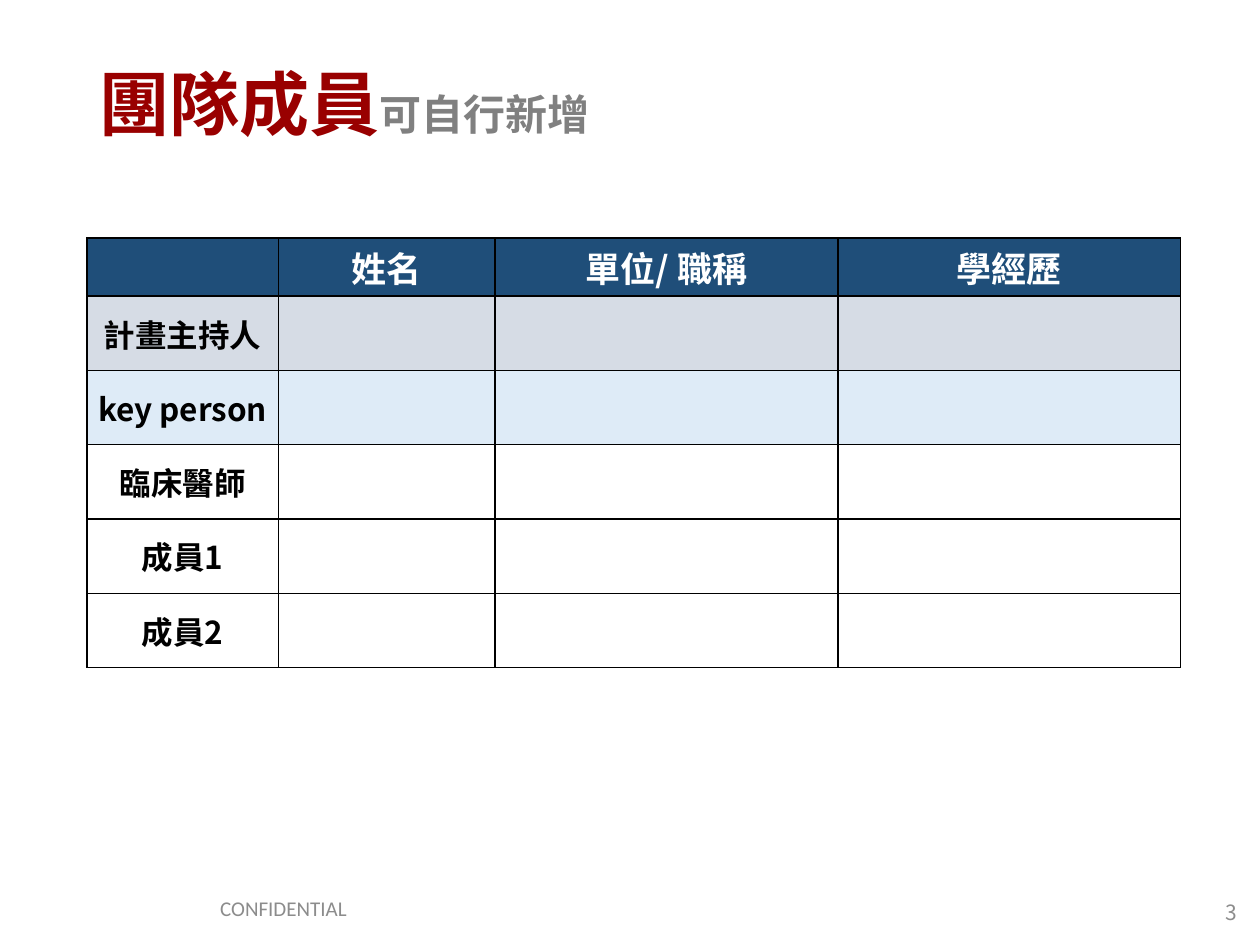
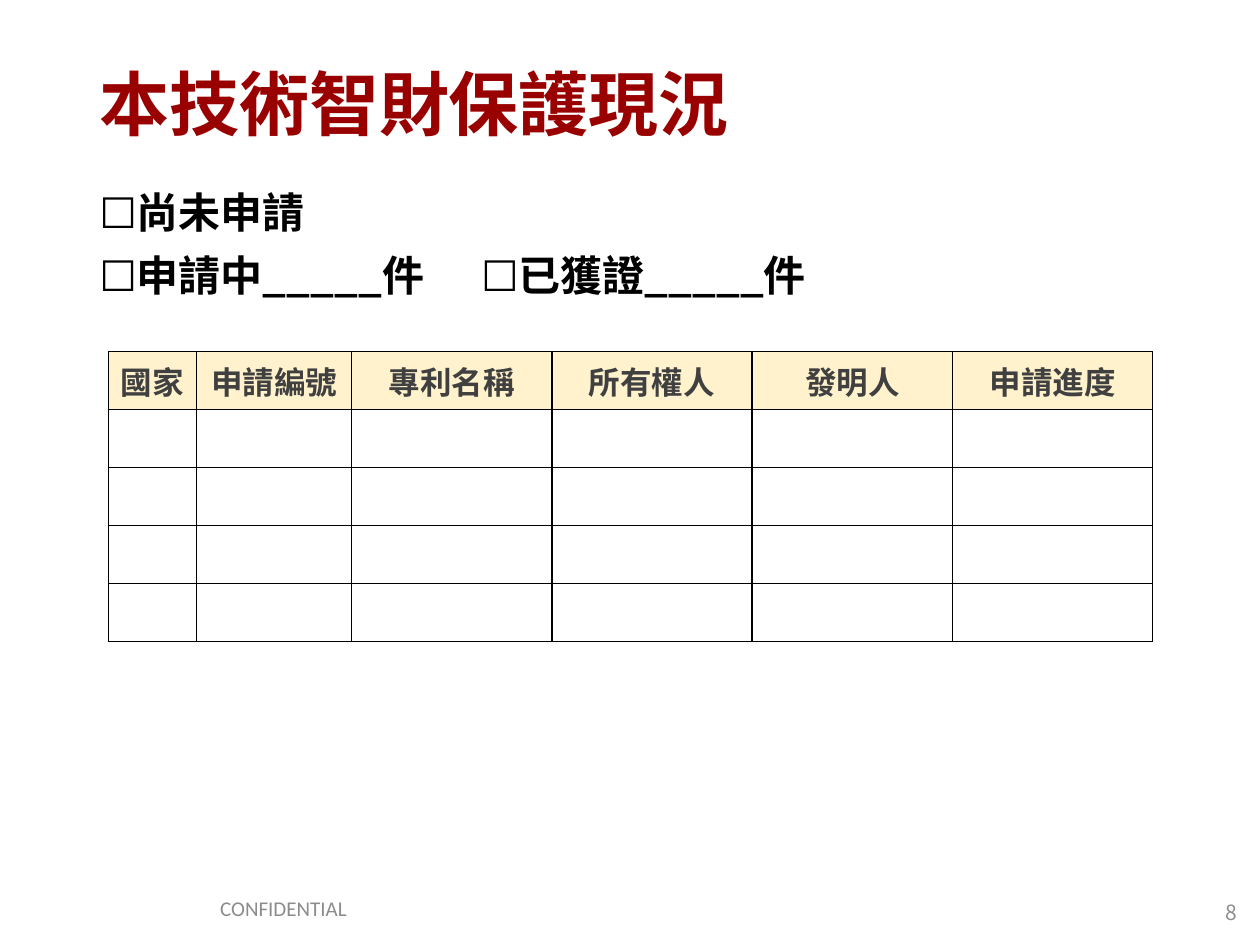
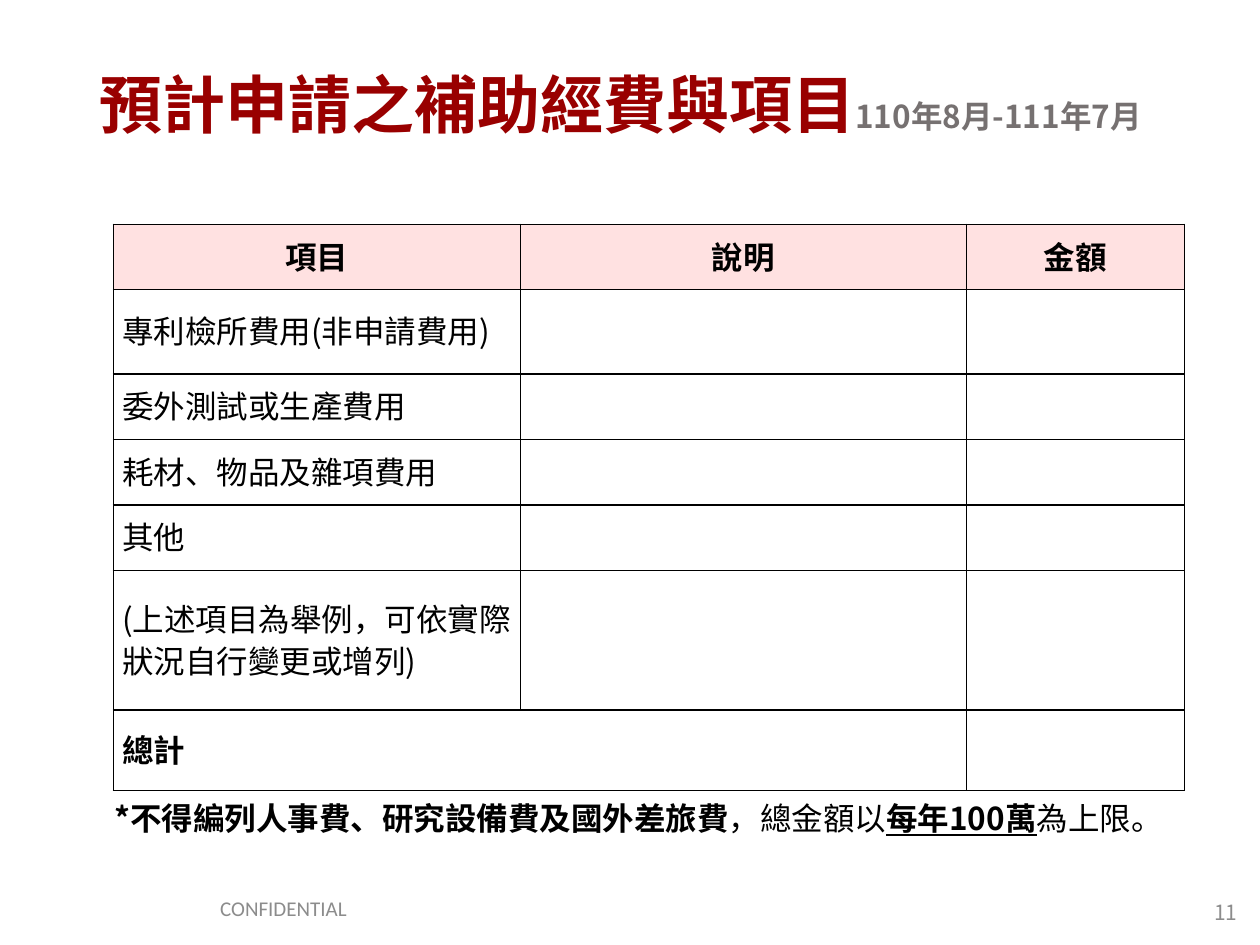
from lxml.etree import SubElement
from pptx import Presentation
from pptx.dml.color import RGBColor
from pptx.enum.text import MSO_ANCHOR, PP_ALIGN
from pptx.oxml.ns import qn
from pptx.util import Inches, Pt

RED = RGBColor(0x99, 0x00, 0x00)
GRAY = RGBColor(0x80, 0x80, 0x80)
WARM_GRAY = RGBColor(0x76, 0x71, 0x71)
FOOTER_GRAY = RGBColor(0x8C, 0x8C, 0x8C)
DARK_GRAY = RGBColor(0x40, 0x40, 0x40)
BLACK = RGBColor(0x00, 0x00, 0x00)
WHITE = RGBColor(0xFF, 0xFF, 0xFF)
NAVY = RGBColor(0x1F, 0x4E, 0x79)
BLUE_GRAY = RGBColor(0xD6, 0xDC, 0xE5)
LIGHT_BLUE = RGBColor(0xDE, 0xEB, 0xF7)
CREAM = RGBColor(0xFF, 0xF2, 0xCC)
PINK = RGBColor(0xFF, 0xE1, 0xE1)

CJK_FONT = "Noto Sans CJK SC"
TIGHT = 0.83  # line spacing of running text
CELL_MARGINS = (0.07, 0)


class Deck:
    """Holds the shared style and the current slide."""

    def __init__(self):
        self.deck = Presentation()
        self.deck.slide_width = Inches(10)
        self.deck.slide_height = Inches(7.5)
        self.page = None

    def add_page(self, number, title, size=40, note="", note_size=24, note_color=GRAY):
        self.page = self.deck.slides.add_slide(self.deck.slide_layouts[6])
        spans = [(title, dict(size=Pt(size), bold=True, color=RED))]
        if note:
            spans.append((note, dict(size=Pt(note_size), bold=True, color=note_color)))
        self.text((0.69, 0.4, 8.62, 0.94), [spans], anchor=MSO_ANCHOR.MIDDLE,
                  line_spacing=TIGHT)
        # Footer
        small = dict(size=Pt(12), color=FOOTER_GRAY)
        self.text((9.46, 7.04, 0.46, 0.4), [[(str(number), small)]],
                  anchor=MSO_ANCHOR.MIDDLE, alignment=PP_ALIGN.RIGHT)
        self.text((0.92, 7.01, 2.66, 0.4), [[("CONFIDENTIAL", dict(small, name="Calibri"))]],
                  anchor=MSO_ANCHOR.MIDDLE, alignment=PP_ALIGN.CENTER)

    def text(self, place, paragraphs, anchor=MSO_ANCHOR.TOP, gap=0, tab=None, **layout):
        box = self.page.shapes.add_textbox(*map(Inches, place))
        frame = box.text_frame
        frame.word_wrap = True
        frame.vertical_anchor = anchor
        for index, spans in enumerate(paragraphs):
            para = frame.add_paragraph() if index else frame.paragraphs[0]
            if tab:
                tabs = SubElement(para._p.get_or_add_pPr(), qn("a:tabLst"))
                SubElement(tabs, qn("a:tab"), pos=str(Inches(tab)), algn="l")
            if index and gap:
                para.space_before = Pt(gap)
            self.fill_paragraph(para, spans, **layout)

    def fill_paragraph(self, para, spans, **layout):
        for key, value in layout.items():
            setattr(para, key, value)
        for words, style in spans:
            span = para.add_run()
            span.text = words
            for key, value in {"name": CJK_FONT, **style}.items():
                if key == "color":
                    span.font.color.rgb = value
                else:
                    setattr(span.font, key, value)
            SubElement(span._r.get_or_add_rPr(), qn("a:ea"), typeface=span.font.name)

    def table(self, left, top, widths, heights):
        frame = self.page.shapes.add_table(
            len(heights), len(widths), Inches(left), Inches(top),
            Inches(sum(widths)), Inches(sum(heights)))
        table = frame.table
        table.first_row = table.horz_banding = False
        for column, width in zip(table.columns, widths):
            column.width = Inches(width)
        for row, height in zip(table.rows, heights):
            row.height = Inches(height)
        for cell in table.iter_cells():
            self.border(cell)
            cell.fill.background()
        return table

    def border(self, cell):
        properties = cell._tc.get_or_add_tcPr()
        for side in ("a:lnL", "a:lnR", "a:lnT", "a:lnB"):
            line = SubElement(properties, qn(side), w=str(Pt(1)))
            fill = SubElement(line, qn("a:solidFill"))
            SubElement(fill, qn("a:srgbClr"), val=str(BLACK))

    def cell(self, cell, words, size=18, color=BLACK, bold=True, margins=CELL_MARGINS,
             anchor=MSO_ANCHOR.MIDDLE, **layout):
        cell.margin_left = cell.margin_right = Inches(margins[0])
        cell.margin_top = cell.margin_bottom = Inches(margins[1])
        cell.vertical_anchor = anchor
        style = dict(size=Pt(size), bold=bold, color=color)
        self.fill_paragraph(cell.text_frame.paragraphs[0], [(words, style)], **layout)

    def shade_row(self, table, row, color):
        for cell in table.rows[row].cells:
            cell.fill.solid()
            cell.fill.fore_color.rgb = color


def team_page(deck):
    deck.add_page(3, "團隊成員", note="可自行新增")
    table = deck.table(0.69, 1.89, [1.52, 1.72, 2.72, 2.72], [0.46] + [0.59] * 5)
    for row, color in enumerate((NAVY, BLUE_GRAY, LIGHT_BLUE)):
        deck.shade_row(table, row, color)
    for column, heading in enumerate(("姓名", "單位/ 職稱", "學經歷"), 1):
        deck.cell(table.cell(0, column), heading, size=20, color=WHITE,
                  alignment=PP_ALIGN.CENTER)
    roles = ("計畫主持人", "key person", "臨床醫師", "成員1", "成員2")
    for row, role in enumerate(roles, 1):
        deck.cell(table.cell(row, 0), role, alignment=PP_ALIGN.CENTER)


def patent_page(deck):
    deck.add_page(8, "本技術智財保護現況")
    strong = dict(size=Pt(24), bold=True, color=BLACK)
    choices = ("☐尚未申請", "☐申請中_____件\t☐已獲證_____件")
    deck.text((0.69, 1.5, 8.62, 5.25), [[(choice, strong)] for choice in choices],
              gap=12, tab=3.03, line_spacing=TIGHT)
    table = deck.table(0.86, 2.79, [0.7, 1.23] + [1.59] * 4, [0.46] * 5)
    deck.shade_row(table, 0, CREAM)
    headings = ("國家", "申請編號", "專利名稱", "所有權人", "發明人", "申請進度")
    for column, heading in enumerate(headings):
        deck.cell(table.cell(0, column), heading, color=DARK_GRAY, margins=(0.1, 0.05),
                  anchor=MSO_ANCHOR.TOP, alignment=PP_ALIGN.CENTER)


def budget_page(deck):
    deck.add_page(11, "預計申請之補助經費與項目", size=36, note="110年8月-111年7月",
                  note_size=18, note_color=WARM_GRAY)
    table = deck.table(0.9, 1.78, [3.23, 3.54, 1.73], [0.52] * 5 + [1.11, 0.64])
    deck.shade_row(table, 0, PINK)
    for column, heading in enumerate(("項目", "說明", "金額")):
        deck.cell(table.cell(0, column), heading, alignment=PP_ALIGN.CENTER,
                  line_spacing=Pt(24))
    items = ("專利檢所費用(非申請費用)", "委外測試或生產費用", "耗材、物品及雜項費用",
             "其他", "(上述項目為舉例，可依實際狀況自行變更或增列)", "總計")
    for row, item in enumerate(items, 1):
        deck.cell(table.cell(row, 0), item, bold=item == "總計", line_spacing=Pt(24))
    table.cell(6, 0).merge(table.cell(6, 1))

    # Spending limits
    plain = dict(size=Pt(18), bold=False, color=BLACK)
    strong = dict(plain, bold=True)
    deck.text((0.81, 6.34, 8.5, 0.4), [[
        ("*不得編列人事費、研究設備費及國外差旅費", strong),
        ("，總金額以", plain),
        ("每年100萬", dict(strong, underline=True)),
        ("為上限。", plain),
    ]], line_spacing=TIGHT)


def main():
    deck = Deck()
    team_page(deck)
    patent_page(deck)
    budget_page(deck)
    deck.deck.save("out.pptx")


if __name__ == "__main__":
    main()
